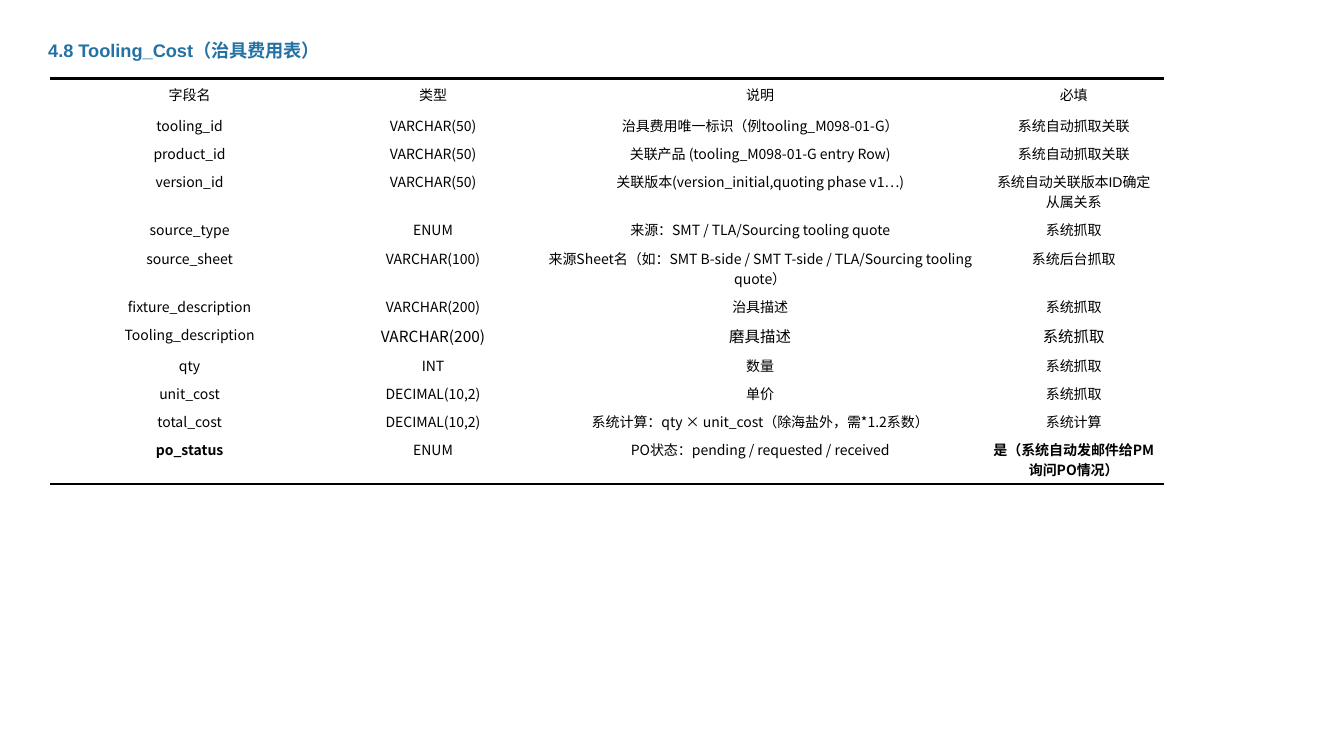
from lxml import etree
from pptx import Presentation
from pptx import util as u
from pptx.dml.color import RGBColor
from pptx.enum import text
from pptx.oxml import ns

CJK, LATIN = "Noto Sans CJK SC", "Arial"
COLUMN_WIDTHS = [2.76, 2.07, 4.42, 1.8]
FIELDS = [
    ("字段名", "类型", "说明", "必填"),
    ("tooling_id", "VARCHAR(50)", "治具费用唯一标识（例tooling_M098-01-G）", "系统自动抓取关联"),
    ("product_id", "VARCHAR(50)", "关联产品 (tooling_M098-01-G entry Row)", "系统自动抓取关联"),
    ("version_id", "VARCHAR(50)", "关联版本(version_initial,quoting phase v1…)", "系统自动关联版本ID确定从属关系"),
    ("source_type", "ENUM", "来源：SMT / TLA/Sourcing tooling quote", "系统抓取"),
    ("source_sheet", "VARCHAR(100)",
     "来源Sheet名（如：SMT B-side / SMT T-side / TLA/Sourcing tooling quote）", "系统后台抓取"),
    ("fixture_description", "VARCHAR(200)", "治具描述", "系统抓取"),
    ("Tooling_description", "VARCHAR(200)", "磨具描述", "系统抓取"),
    ("qty", "INT", "数量", "系统抓取"),
    ("unit_cost", "DECIMAL(10,2)", "单价", "系统抓取"),
    ("total_cost", "DECIMAL(10,2)", "系统计算：qty × unit_cost（除海盐外，需*1.2系数）", "系统计算"),
    ("po_status", "ENUM", "PO状态：pending / requested / received", "是（系统自动发邮件给PM询问PO情况）"),
]
LAST = len(FIELDS) - 1
LARGE_ROW = 7


def color(value):
    return RGBColor.from_string(value)


def apply(target, values):
    for name, value in values.items():
        setattr(target, name, value)


def margins(left, top, right, bottom):
    return {"margin_left": u.Inches(left), "margin_top": u.Inches(top),
            "margin_right": u.Inches(right), "margin_bottom": u.Inches(bottom)}


def cell_format(row, column):
    """Font values for one table cell."""
    values = {"size": u.Pt(10), "name": CJK, "bold": False}
    if column == 3 and 0 < row < LAST - 1:
        values["name"] = LATIN
    if row == LARGE_ROW and column > 0:
        values["size"] = u.Pt(11)
        if column == 2:
            values["name"] = LATIN
    if row == LAST and column in (0, 3):
        values["bold"] = True
    return values


class SlideBuilder:
    ink, paper, accent = "000000", "FFFFFF", "2471A3"

    def __init__(self, deck):
        self.page = deck.slides.add_slide(deck.slide_layouts[6])

    def add_span(self, para, words, values, shade):
        span = para.add_run()
        span.text = words
        apply(span.font, values)
        span.font.color.rgb = color(shade)
        # East Asian characters share one typeface
        east = etree.SubElement(span._r.get_or_add_rPr(), ns.qn("a:ea"))
        east.set("typeface", CJK)

    def title(self, words, left, top, width, height):
        box = self.page.shapes.add_textbox(*map(u.Inches, (left, top, width, height)))
        apply(box.text_frame, {"word_wrap": False, "vertical_anchor": text.MSO_ANCHOR.TOP,
                               **margins(0.1, 0.19, 0.1, 0.06)})
        self.add_span(box.text_frame.paragraphs[0], words,
                      {"size": u.Pt(13), "name": LATIN, "bold": True}, self.accent)

    def border(self, cell, side, visible):
        props = cell._tc.get_or_add_tcPr()
        line = etree.SubElement(props, ns.qn(f"a:ln{side}"))
        if visible:
            line.set("w", str(u.Pt(2)))
            fill = etree.SubElement(line, ns.qn("a:solidFill"))
            etree.SubElement(fill, ns.qn("a:srgbClr")).set("val", self.ink)
        else:
            etree.SubElement(line, ns.qn("a:noFill"))

    def table(self, rows, left, top, widths, header_height, row_height):
        height = header_height + row_height * (len(rows) - 1)
        frame = self.page.shapes.add_table(
            len(rows), len(widths), *map(u.Inches, (left, top, sum(widths), height)))
        grid = frame.table
        apply(grid, {"first_row": False, "horz_banding": False})
        for column, width in zip(grid.columns, widths):
            column.width = u.Inches(width)
        for r, words in enumerate(rows):
            grid.rows[r].height = u.Inches(row_height if r else header_height)
            for c, word in enumerate(words):
                self.cell(grid.cell(r, c), word, r, c)

    def cell(self, cell, word, row, column):
        pad = 0.04 if row else 0.06
        anchor = text.MSO_ANCHOR.TOP if row else text.MSO_ANCHOR.MIDDLE
        apply(cell, {"vertical_anchor": anchor, **margins(0.08, pad, 0.08, pad)})
        # Rules only above the header and below the last row
        for side in "LRTB":
            self.border(cell, side, (side, row) in (("T", 0), ("B", LAST)))
        cell.fill.solid()
        cell.fill.fore_color.rgb = color(self.paper)
        para = cell.text_frame.paragraphs[0]
        para.alignment = text.PP_ALIGN.CENTER
        self.add_span(para, word, cell_format(row, column), self.ink)


def main():
    deck = Presentation()
    apply(deck, {"slide_width": u.Inches(13.33), "slide_height": u.Inches(7.5)})
    builder = SlideBuilder(deck)
    # Field table
    builder.table(FIELDS, 0.5, 0.78, COLUMN_WIDTHS, 0.32, 0.28)
    # Heading
    builder.title("4.8 Tooling_Cost（治具费用表）", 0.38, 0.22, 2.94, 0.77)
    deck.save("out.pptx")


if __name__ == "__main__":
    main()
